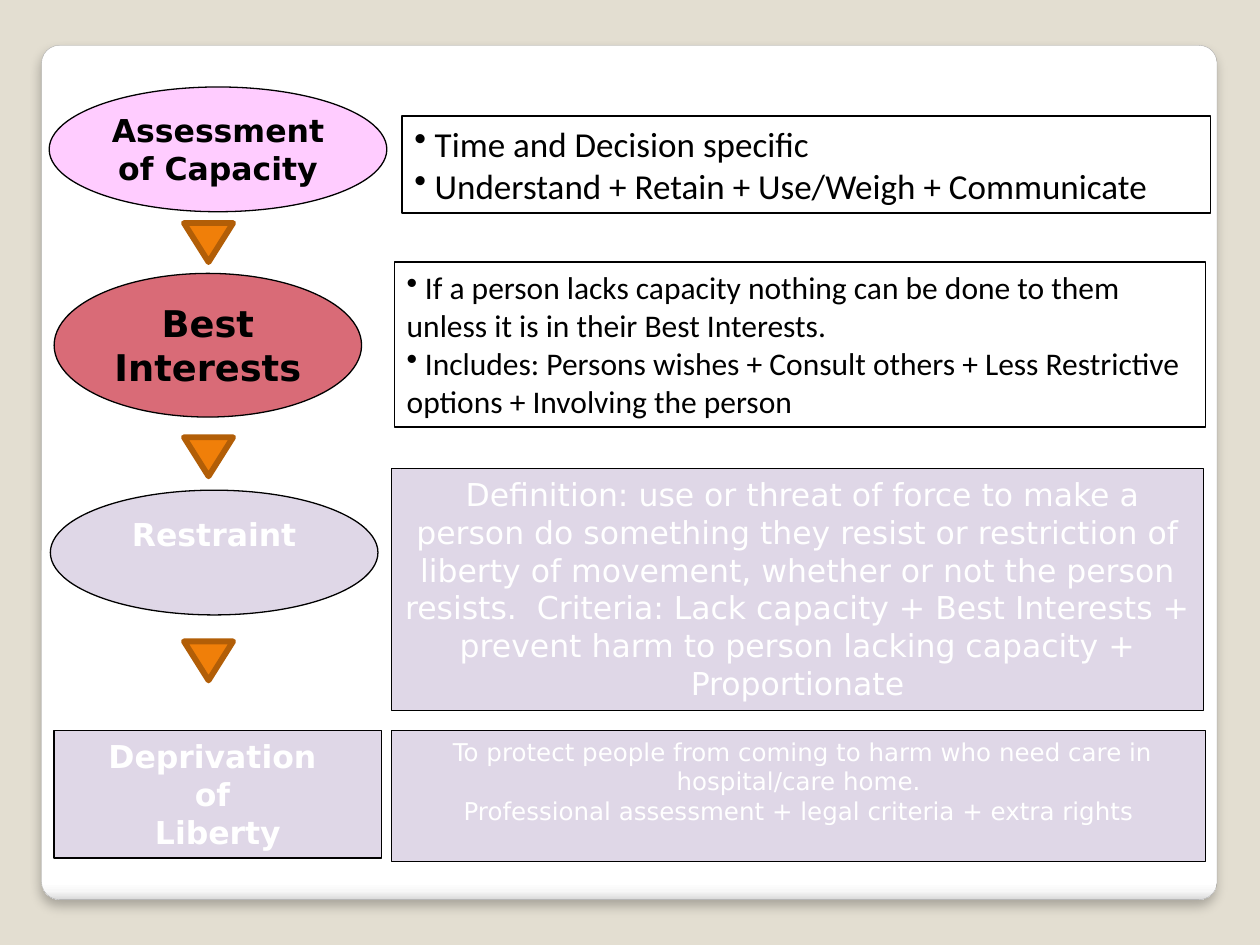
from lxml import etree
from pptx import Presentation
from pptx.dml.color import RGBColor
from pptx.enum.shapes import MSO_SHAPE as Shape
from pptx.enum.text import MSO_ANCHOR as Anchor, PP_ALIGN as Align
from pptx.oxml import parse_xml
from pptx.oxml.ns import nsdecls, qn
from pptx.util import Inches, Pt

COLORS = {
    "background": "E3DED1",
    "card_edge": "A4A4A4",
    "pink": "FFCCFF",
    "red": "D96B77",
    "lavender": "DFD7E7",
    "orange": "F07F09",
    "brown": "B25E07",
    "black": "000000",
    "white": "FFFFFF",
}
CARD_STOPS = [(0, "FFFFFF"), (98, "FFFFFF"), (99, "F7F7F7"), (100, "DADADA")]


def rgb(name):
    """Return the named colour."""
    return RGBColor.from_string(COLORS[name])


def add_outlined(s, kind, box, fill, line="black", width=0.75):
    """Add a shape with a solid fill, or none, and an outline."""
    sp = s.shapes.add_shape(kind, *map(Inches, box))
    sp.shadow.inherit = False
    if fill:
        sp.fill.solid()
        sp.fill.fore_color.rgb = rgb(fill)
    else:
        sp.fill.background()
    sp.line.color.rgb = rgb(line)
    sp.line.width = Pt(width)
    return sp


def add_card(s):
    """Add the white rounded panel with its shaded edge and soft shadow."""
    sp = add_outlined(s, Shape.ROUNDED_RECTANGLE, (0.33, 0.36, 9.33, 6.78),
                      "white", "card_edge", 0.16)
    sp.adjustments[0] = 0.021
    stops = "".join(f'<a:gs pos="{pos * 1000}"><a:srgbClr val="{color}"/></a:gs>'
                    for pos, color in CARD_STOPS)
    props = sp.element.spPr
    props.replace(props.find(qn("a:solidFill")), parse_xml(
        f'<a:gradFill {nsdecls("a")}><a:gsLst>{stops}</a:gsLst>'
        '<a:lin ang="5400000" scaled="0"/></a:gradFill>'))
    props.find(qn("a:effectLst")).append(parse_xml(
        f'<a:outerShdw {nsdecls("a")} blurRad="{Pt(6)}" dist="{Pt(4)}" dir="5400000" '
        'algn="t" rotWithShape="0"><a:srgbClr val="000000"><a:alpha val="25000"/>'
        '</a:srgbClr></a:outerShdw>'))


def add_text(sp, lines, size, color, font="DejaVu Sans", bold=False, bullets=False):
    """Write the lines from the top of a shape, centred or bulleted."""
    tf = sp.text_frame
    tf.word_wrap = True
    tf.vertical_anchor = Anchor.TOP
    tf.text = "\n".join(lines)
    for p in tf.paragraphs:
        p.alignment = Align.LEFT if bullets else Align.CENTER
        if bullets:
            etree.SubElement(p._p.get_or_add_pPr(), qn("a:buChar")).set("char", "•")
        p.font.name = font
        p.font.size = Pt(size)
        p.font.bold = bold
        p.font.color.rgb = rgb(color)


def add_step(s, kind, box, fill, lines, size, color):
    """Add a bold step label."""
    add_text(add_outlined(s, kind, box, fill), lines, size, color, bold=True)


def add_bullets(s, box, fill, lines, size):
    """Add a box of bulleted details."""
    sp = add_outlined(s, Shape.RECTANGLE, box, fill)
    add_text(sp, lines, size, "black", "Calibri", bullets=True)


def add_details(s, box, lines, size):
    """Add a lavender box of centred details."""
    add_text(add_outlined(s, Shape.RECTANGLE, box, "lavender"), lines, size, "white")


def add_pointer(s, top):
    """Add a triangle that points down to the next step."""
    sp = add_outlined(s, Shape.ISOSCELES_TRIANGLE, (1.46, top, 0.39, 0.31),
                      "orange", "brown", 3.35)
    sp.rotation = 180
    etree.SubElement(sp.line._get_or_add_ln(), qn("a:round"))


def main():
    """Build and save the slide."""
    prs = Presentation()
    prs.slide_width, prs.slide_height = Inches(10), Inches(7.5)
    s = prs.slides.add_slide(prs.slide_layouts[6])
    s.background.fill.solid()
    s.background.fill.fore_color.rgb = rgb("background")
    add_card(s)

    add_step(s, Shape.OVAL, (0.39, 0.69, 2.68, 0.99), "pink",
             ["Assessment of Capacity"], 18, "black")
    add_step(s, Shape.OVAL, (0.43, 2.17, 2.44, 1.14), "red",
             ["Best Interests"], 21, "black")
    add_step(s, Shape.OVAL, (0.4, 3.89, 2.6, 0.99), "lavender",
             ["Restraint"], 18, "white")
    add_step(s, Shape.RECTANGLE, (0.43, 5.8, 2.6, 1.01), "lavender",
             ["Deprivation ", "of ", "Liberty"], 18, "white")

    add_bullets(s, (3.19, 0.92, 6.42, 0.77), "white", [
        " Time and Decision specific",
        " Understand + Retain + Use/Weigh + Communicate"], 20)
    add_bullets(s, (3.13, 2.08, 6.44, 1.31), None, [
        " If a person lacks capacity nothing can be done to them unless it is in "
        "their Best Interests.",
        " Includes: Persons wishes + Consult others + Less Restrictive options + "
        "Involving the person"], 18)
    add_details(s, (3.11, 3.72, 6.44, 1.92), [
        " Definition: use or threat of force to make a person do something they "
        "resist or restriction of liberty of movement, whether or not the person "
        "resists.  Criteria: Lack capacity + Best Interests + prevent harm to "
        "person lacking capacity + Proportionate"], 18)
    add_details(s, (3.11, 5.8, 6.46, 1.04), [
        " To protect people from coming to harm who need care in hospital/care home.",
        " Professional assessment + legal criteria + extra rights "], 14)

    for top in (1.77, 3.47, 5.09):
        add_pointer(s, top)
    prs.save("out.pptx")


if __name__ == "__main__":
    main()
